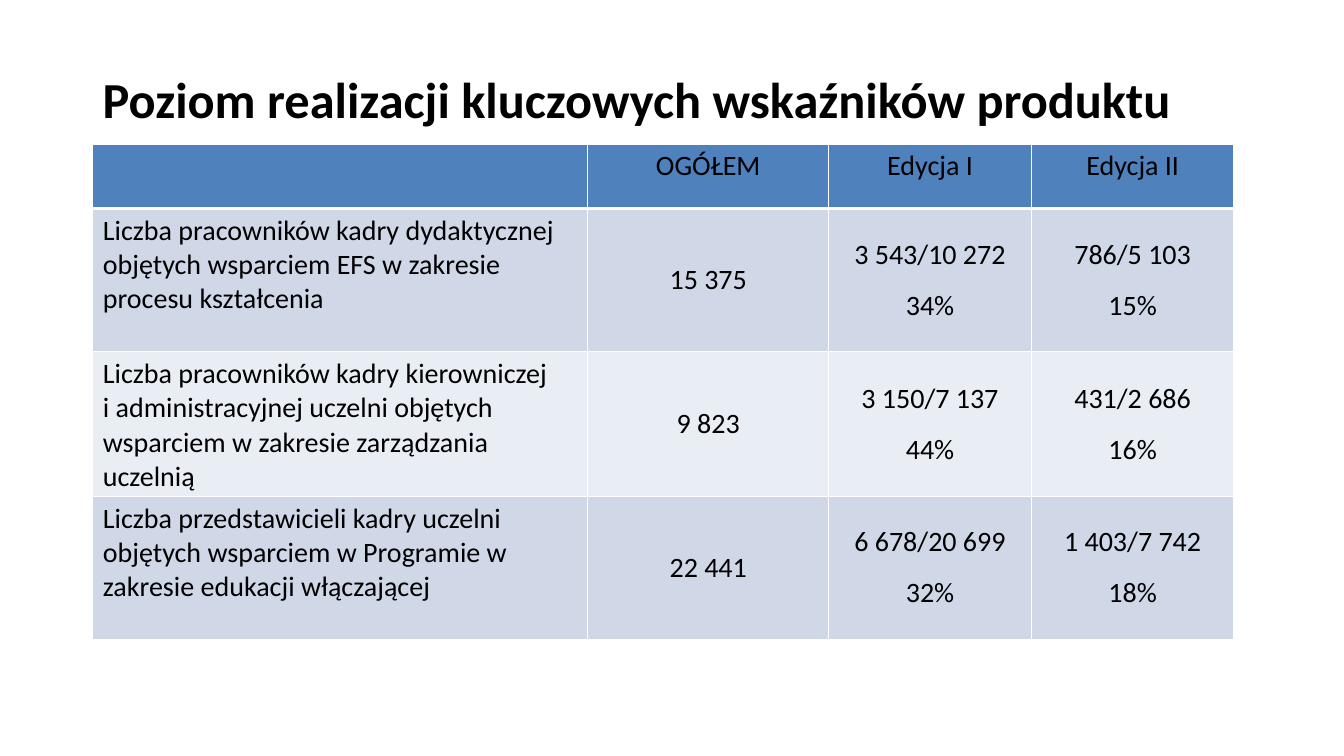
from dataclasses import dataclass

import pptx
import pptx.dml.color
import pptx.enum.text
import pptx.oxml
import pptx.oxml.ns
import pptx.slide
import pptx.table
import pptx.text.text
import pptx.util

Inches = pptx.util.Inches
Pt = pptx.util.Pt
RGBColor = pptx.dml.color.RGBColor
Anchor = pptx.enum.text.MSO_ANCHOR
Align = pptx.enum.text.PP_ALIGN

BLACK = RGBColor(0x00, 0x00, 0x00)
WHITE = RGBColor(0xFF, 0xFF, 0xFF)
HEADER_BLUE = RGBColor(0x4F, 0x81, 0xBD)
BANDS = (RGBColor(0xD0, 0xD8, 0xE8), RGBColor(0xE9, 0xED, 0xF4))
FONT = "Calibri"

COLUMN_WIDTHS = (4.91, 2.39, 2.01, 2.01)
HEADER_HEIGHT = 0.64
ROW_HEIGHT = 1.42


@dataclass(frozen=True)
class Indicator:
    name: str
    total: str
    first_edition: str
    second_edition: str

    def texts(self) -> tuple[str, ...]:
        return self.name, self.total, self.first_edition, self.second_edition


HEADER = Indicator("", "OGÓŁEM", "Edycja I", "Edycja II")
INDICATORS = (
    Indicator(
        "Liczba pracowników kadry dydaktycznej objętych wsparciem EFS "
        "w zakresie procesu kształcenia",
        "15 375", "3 543/10 272\n34%", "786/5 103\n15%",
    ),
    Indicator(
        "Liczba pracowników kadry kierowniczej \vi administracyjnej uczelni "
        "objętych wsparciem w zakresie zarządzania uczelnią",
        "9 823", "3 150/7 137\n44%", "431/2 686\n16%",
    ),
    Indicator(
        "Liczba przedstawicieli kadry uczelni objętych wsparciem w Programie "
        "w zakresie edukacji włączającej",
        "22 441", "6 678/20 699\n32%", "1 403/7 742\n18%",
    ),
)


def format_runs(para: pptx.text.text._Paragraph, size: int, bold: bool) -> None:
    for span in para.runs:
        span.font.name = FONT
        span.font.size = Pt(size)
        span.font.bold = bold
        span.font.color.rgb = BLACK


def add_title(page: pptx.slide.Slide, text: str) -> None:
    box = page.shapes.add_textbox(Inches(0.92), Inches(0.1), Inches(11.5), Inches(1.45))
    frame = box.text_frame
    frame.word_wrap = True
    frame.vertical_anchor = Anchor.MIDDLE
    frame.text = text
    para = frame.paragraphs[0]
    para.line_spacing = 1.5
    format_runs(para, 36, True)


def set_borders(cell: pptx.table._Cell, bottom_width: int) -> None:
    """Draw white borders; they must precede the fill in the cell properties."""
    properties = cell._tc.get_or_add_tcPr()
    namespace = pptx.oxml.ns.nsdecls("a")
    for side, width in (("L", 1), ("R", 1), ("T", 1), ("B", bottom_width)):
        properties.append(pptx.oxml.parse_xml(
            f'<a:ln{side} {namespace} w="{Pt(width)}"><a:solidFill>'
            f'<a:srgbClr val="{WHITE}"/></a:solidFill></a:ln{side}>'
        ))


def fill_row(table: pptx.table.Table, index: int, indicator: Indicator) -> None:
    is_header = index == 0
    for column, text in enumerate(indicator.texts()):
        cell = table.cell(index, column)
        set_borders(cell, 3 if is_header else 1)
        cell.fill.solid()
        cell.fill.fore_color.rgb = HEADER_BLUE if is_header else BANDS[(index - 1) % 2]
        is_value = column > 0
        cell.vertical_anchor = Anchor.MIDDLE if is_value and not is_header else Anchor.TOP
        cell.text_frame.text = text
        for position, para in enumerate(cell.text_frame.paragraphs):
            para.alignment = Align.CENTER if is_value else Align.LEFT
            if position > 0:
                para.space_before = Pt(12)
            format_runs(para, 20, False)


def add_indicator_table(page: pptx.slide.Slide) -> None:
    rows = (HEADER, *INDICATORS)
    height = HEADER_HEIGHT + ROW_HEIGHT * len(INDICATORS)
    table = page.shapes.add_table(
        len(rows), len(COLUMN_WIDTHS), Inches(0.92), Inches(1.43),
        Inches(sum(COLUMN_WIDTHS)), Inches(height),
    ).table
    table.first_row = False
    table.horz_banding = False
    for column, width in zip(table.columns, COLUMN_WIDTHS):
        column.width = Inches(width)
    for index, indicator in enumerate(rows):
        table.rows[index].height = Inches(ROW_HEIGHT if index else HEADER_HEIGHT)
        fill_row(table, index, indicator)


def main() -> None:
    deck = pptx.Presentation()
    deck.slide_width = Inches(13.33)
    deck.slide_height = Inches(7.5)
    page = deck.slides.add_slide(deck.slide_layouts[6])
    add_title(page, "Poziom realizacji kluczowych wskaźników produktu")
    add_indicator_table(page)
    deck.save("out.pptx")


if __name__ == "__main__":
    main()
